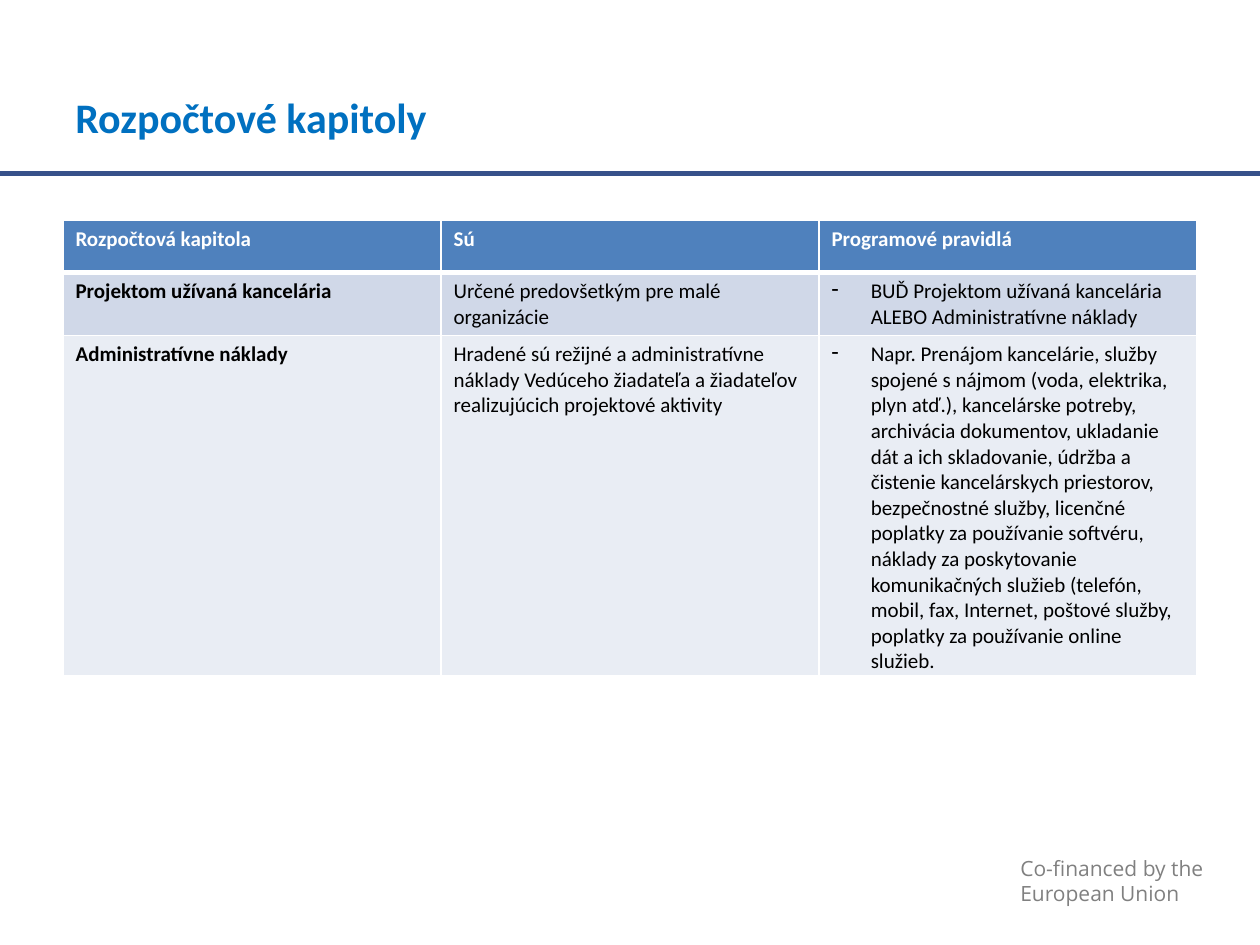
from lxml import etree
from pptx import Presentation
from pptx.dml.color import RGBColor
from pptx.enum.shapes import MSO_CONNECTOR
from pptx.enum.text import MSO_ANCHOR
from pptx.oxml.ns import qn
from pptx.util import Cm, Pt

LINE = MSO_CONNECTOR.STRAIGHT
MIDDLE = MSO_ANCHOR.MIDDLE

COLORS = {
    "title": "0070C0", "rule": "37518A", "footer": "808080",
    "head": "4F81BD", "odd": "D0D8E8", "even": "E9EDF4",
    "white": "FFFFFF", "black": "000000",
}


def add_run(para, text, font, size, color, bold=False):
    run = para.add_run()
    run.text = text
    run.font.name = font
    run.font.size = Pt(size)
    run.font.bold = bold
    run.font.color.rgb = RGBColor.from_string(COLORS[color])


def add_border(cell, side, width):
    props = cell._tc.get_or_add_tcPr()
    edge = etree.SubElement(props, qn("a:ln" + side), w=str(Pt(width)))
    fill = etree.SubElement(edge, qn("a:solidFill"))
    etree.SubElement(fill, qn("a:srgbClr"), val=COLORS["white"])


prs = Presentation()
prs.slide_width, prs.slide_height = Cm(25.4), Cm(19.05)
slide = prs.slides.add_slide(prs.slide_layouts[6])

# Rule under the title
rule = slide.shapes.add_connector(LINE, 0, Cm(3.5), Cm(25.4), Cm(3.5))
rule.line.color.rgb = RGBColor.from_string(COLORS["rule"])
rule.line.width = Pt(3)
etree.SubElement(rule._element.spPr, qn("a:effectLst"))

# Footer
box = slide.shapes.add_textbox(Cm(20.32), Cm(17.12), Cm(4.37), Cm(1.27))
frame = box.text_frame
frame.word_wrap = True
add_run(frame.paragraphs[0], "Co-financed by the", "Open Sans", 12, "footer")
add_run(frame.add_paragraph(), "European Union", "Open Sans", 12, "footer")

# Title
box = slide.shapes.add_textbox(Cm(1.27), Cm(0.76), Cm(18.03), Cm(3.18))
frame = box.text_frame
frame.word_wrap = True
frame.vertical_anchor = MIDDLE
add_run(frame.paragraphs[0], "Rozpočtové kapitoly", "Calibri", 24, "title", True)

# Budget table: each cell is a list of paragraphs
rows = [
    [["Rozpočtová kapitola"], ["Sú"], ["Programové pravidlá"]],
    [["Projektom užívaná kancelária"],
     ["Určené predovšetkým pre malé organizácie"],
     ["BUĎ Projektom užívaná kancelária", "ALEBO Administratívne náklady"]],
    [["Administratívne náklady"],
     ["Hradené sú režijné a administratívne náklady Vedúceho žiadateľa "
      "a žiadateľov realizujúcich projektové aktivity"],
     ["Napr. Prenájom kancelárie, služby spojené s nájmom (voda, elektrika, "
      "plyn atď.), kancelárske potreby, archivácia dokumentov, ukladanie dát "
      "a ich skladovanie, údržba a čistenie kancelárskych priestorov, "
      "bezpečnostné služby, licenčné poplatky za používanie softvéru, náklady "
      "za poskytovanie komunikačných služieb (telefón, mobil, fax, Internet, "
      "poštové služby, poplatky za používanie online služieb."]],
]
fills = ["head", "odd", "even"]
table = slide.shapes.add_table(
    3, 3, Cm(1.27), Cm(4.45), Cm(22.86), Cm(3.12)).table

for r, row in enumerate(rows):
    table.rows[r].height = Cm(1.04)
    for c, paras in enumerate(row):
        cell = table.cell(r, c)
        for side in "LRTB":
            thick = (r, side) in [(0, "B"), (1, "T")]
            add_border(cell, side, 3 if thick else 1)
        cell.fill.solid()
        cell.fill.fore_color.rgb = RGBColor.from_string(COLORS[fills[r]])
        frame = cell.text_frame
        for i, text in enumerate(paras):
            para = frame.add_paragraph() if i else frame.paragraphs[0]
            # Rules hang from a dash; later lines only keep the indent
            if r and c == 2:
                props = para._p.get_or_add_pPr()
                props.set("marL", str(Cm(0.79)))
                props.set("indent", str(0 if i else -Cm(0.79)))
                if i == 0:
                    etree.SubElement(props, qn("a:buChar"), char="-")
            add_run(para, text, "Calibri", 12,
                    "black" if r else "white", r == 0 or c == 0)

prs.save("out.pptx")
